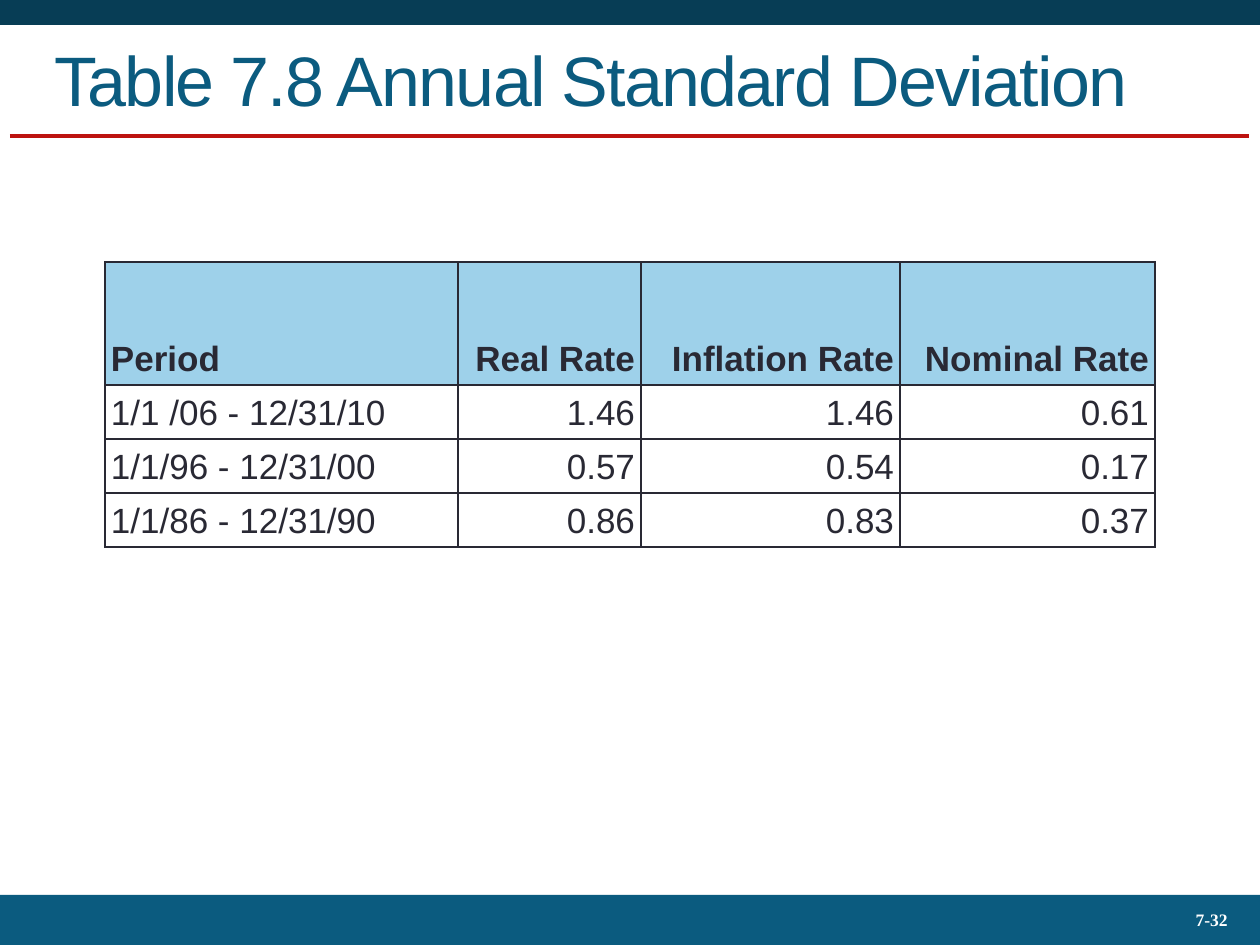
from lxml import etree
from pptx import Presentation
from pptx import util as u
from pptx.dml.color import RGBColor
from pptx.enum import shapes, text
from pptx.oxml import ns

SCALE = 914400 / 126
COLORS = {
    "top": "073D55",
    "main": "0B5B7F",
    "rule": "BD130F",
    "ink": "292934",
    "header": "9ED1EA",
    "white": "FFFFFF",
}
COLUMN_WIDTHS = [353, 183, 259, 255]
ROW_HEIGHTS = [123, 52, 52, 52]
RATES = [
    ["Period", "Real Rate", "Inflation Rate", "Nominal Rate"],
    ["1/1 /06 - 12/31/10", "1.46", "1.46", "0.61"],
    ["1/1/96 - 12/31/00", "0.57", "0.54", "0.17"],
    ["1/1/86 - 12/31/90", "0.86", "0.83", "0.37"],
]


def px(length):
    return u.Emu(round(length * SCALE))


def color(name):
    return RGBColor.from_string(COLORS[name])


def set_font(para, name, size, shade, bold=False):
    para.font.name = name
    para.font.size = u.Pt(size)
    para.font.bold = bold
    para.font.color.rgb = color(shade)


def add_band(page, top, height, shade):
    band = page.shapes.add_shape(
        shapes.MSO_SHAPE.RECTANGLE, 0, px(top), px(1260), px(height))
    band.shadow.inherit = False
    band.fill.solid()
    band.fill.fore_color.rgb = color(shade)
    band.line.fill.background()


def add_rule(page, left, right, top):
    rule = page.shapes.add_connector(
        shapes.MSO_CONNECTOR.STRAIGHT, px(left), px(top), px(right), px(top))
    rule.line.color.rgb = color("rule")
    rule.line.width = u.Pt(2.25)
    etree.SubElement(rule._element.spPr, ns.qn("a:effectLst"))


def add_page_number(page, label):
    box = page.shapes.add_textbox(px(1092), px(898), px(148), px(46))
    frame = box.text_frame
    frame.word_wrap = True
    frame.vertical_anchor = text.MSO_ANCHOR.MIDDLE
    para = frame.paragraphs[0]
    para.text = label
    para.alignment = text.PP_ALIGN.RIGHT
    para.line_spacing = 0.93
    set_font(para, "Times New Roman", 10, "white", True)


def set_title(page, label):
    title = page.shapes.title
    title.left, title.top, title.width, title.height = map(px, (42, 21, 1178, 115))
    frame = title.text_frame
    frame.auto_size = text.MSO_AUTO_SIZE.NONE
    frame.vertical_anchor = text.MSO_ANCHOR.MIDDLE
    para = frame.paragraphs[0]
    para.text = label
    para.alignment = text.PP_ALIGN.LEFT
    set_font(para, "Arial", 40, "main")
    para.runs[0].font._element.set("spc", "-100")


def add_borders(cell):
    properties = cell._tc.get_or_add_tcPr()
    for side in ("lnL", "lnR", "lnT", "lnB"):
        edge = etree.SubElement(properties, ns.qn(f"a:{side}"), w=str(u.Pt(1)))
        fill = etree.SubElement(edge, ns.qn("a:solidFill"))
        etree.SubElement(fill, ns.qn("a:srgbClr"), val=COLORS["ink"])


def format_cell(cell, label, is_header, is_number):
    cell.margin_left = cell.margin_right = px(6)
    cell.margin_top = cell.margin_bottom = px(6)
    cell.vertical_anchor = text.MSO_ANCHOR.BOTTOM
    add_borders(cell)
    if is_header:
        cell.fill.solid()
        cell.fill.fore_color.rgb = color("header")
    else:
        cell.fill.background()
    para = cell.text_frame.paragraphs[0]
    para.text = label
    para.alignment = text.PP_ALIGN.RIGHT if is_number else text.PP_ALIGN.LEFT
    set_font(para, "Arial", 20, "ink", is_header)


def add_rate_table(page):
    table = page.shapes.add_table(
        len(RATES), len(RATES[0]), px(105), px(262),
        px(sum(COLUMN_WIDTHS)), px(sum(ROW_HEIGHTS))).table
    table.first_row = False
    table.horz_banding = False
    for column, width in zip(table.columns, COLUMN_WIDTHS):
        column.width = px(width)
    for row, height in zip(table.rows, ROW_HEIGHTS):
        row.height = px(height)
    for i, labels in enumerate(RATES):
        for j, label in enumerate(labels):
            format_cell(table.cell(i, j), label, i == 0, j > 0)


def main():
    deck = Presentation()
    deck.slide_width, deck.slide_height = px(1260), px(945)
    page = deck.slides.add_slide(deck.slide_layouts.get_by_name("Title Only"))
    add_band(page, 0, 25, "top")
    add_rule(page, 10, 1249, 136)
    add_band(page, 895, 50, "main")
    add_page_number(page, "7-32")
    set_title(page, "Table 7.8 Annual Standard Deviation")
    add_rate_table(page)
    deck.save("out.pptx")


if __name__ == "__main__":
    main()
